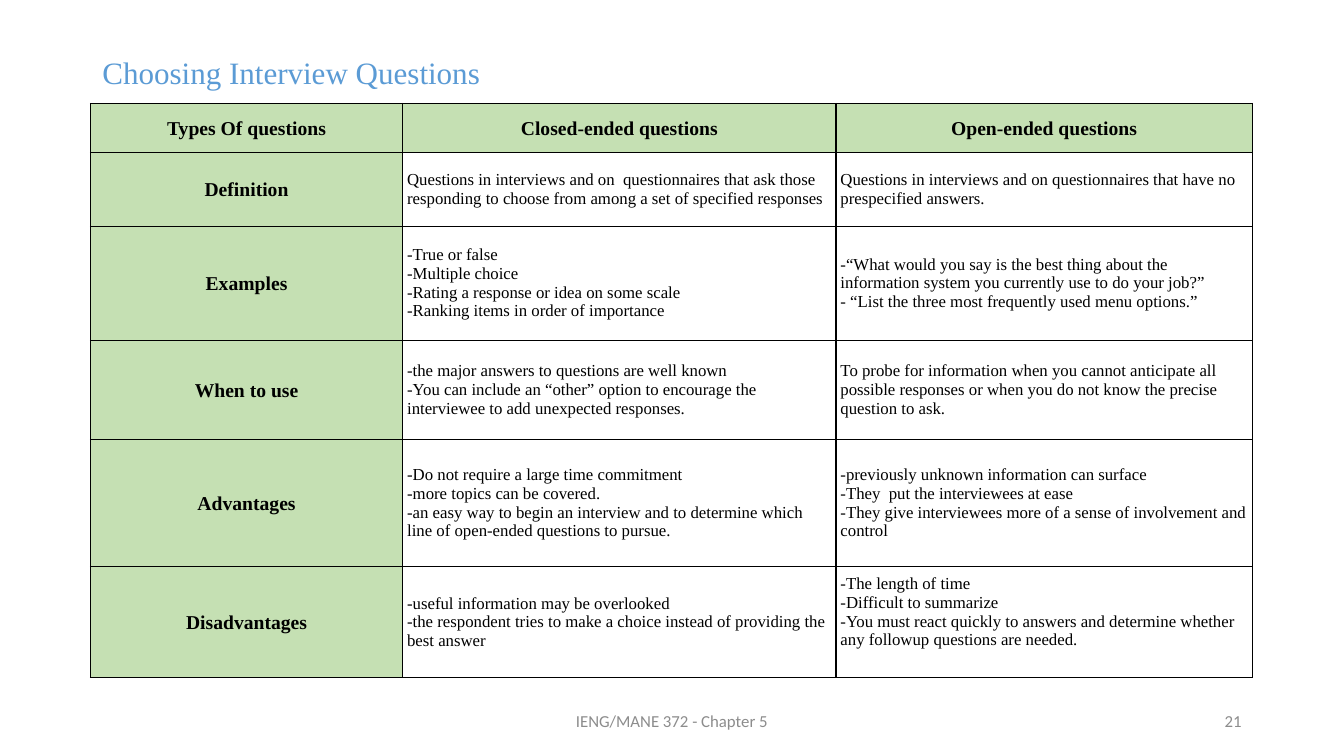
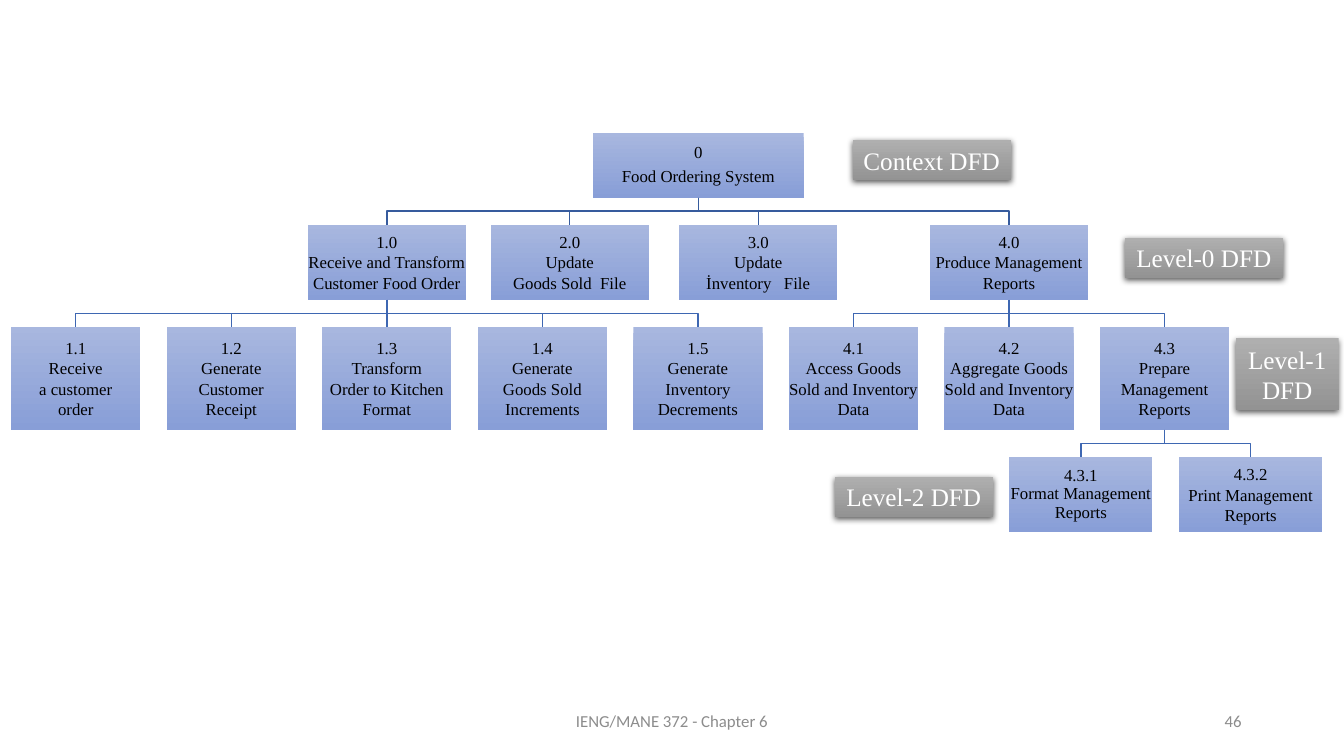
"""Build a table slide on interview questions and a tree slide on data flow levels."""
from dataclasses import dataclass

from lxml.etree import SubElement as Sub
from pptx import Presentation as Deck
from pptx.dml.color import RGBColor as RGB
from pptx.enum.shapes import MSO_CONNECTOR as Link, MSO_SHAPE as Kind
from pptx.enum.text import MSO_ANCHOR as Anchor, PP_ALIGN as Align
from pptx.oxml.ns import qn
from pptx.util import Cm, Pt


@dataclass(frozen=True)
class Theme:
    """Colours, fonts and type sizes."""
    ink: str = "000000"
    white: str = "FFFFFF"
    blue: str = "5B9BD5"
    gray: str = "8C8C8C"
    green: str = "C5E0B3"
    node: tuple = ("A8B7DF", "889ED7")
    tag: tuple = ("AFAFAF", "939393")
    upper: str = "365B9D"
    lower: str = "3E67B2"
    serif: str = "Times New Roman"
    sans: str = "Calibri"
    title: float = 22.2
    label: int = 18
    head: int = 14
    body: int = 12


T = Theme()


def write(frame, text, size=T.body, color=T.ink, font=T.serif, bold=False,
          align=Align.LEFT, lead=None, after=0):
    """Fill a text frame, one paragraph a line."""
    frame.word_wrap = True
    for i, line in enumerate(text.split("\n")):
        para = frame.paragraphs[0] if i == 0 else frame.add_paragraph()
        para.alignment = align
        para.space_after = Pt(after)
        if lead:
            para.line_spacing = lead
        run = para.add_run()
        run.text = line
        run.font.size = Pt(size)
        run.font.name = font
        run.font.bold = bold
        run.font.color.rgb = RGB.from_string(color)


def block(slide, x, y, w, h, shades, text, **style):
    """Add a shaded rectangle with centred text, placed by its top middle."""
    box = slide.shapes.add_shape(Kind.RECTANGLE, Cm(x - w / 2), Cm(y), Cm(w), Cm(h))
    box.shadow.inherit = False
    box.line.fill.background()
    box.fill.gradient()
    box.fill.gradient_angle = 270
    for stop, shade in zip(box.fill.gradient_stops, shades):
        stop.color.rgb = RGB.from_string(shade)
    frame = box.text_frame
    frame.margin_left = frame.margin_right = frame.margin_top = frame.margin_bottom = 0
    frame.vertical_anchor = Anchor.MIDDLE
    write(frame, text, align=Align.CENTER, **style)
    return box


deck = Deck()
deck.slide_width, deck.slide_height = Cm(33.87), Cm(19.05)

slides = []
for chapter, page in (("IENG/MANE 372 - Chapter 5", "21"), ("IENG/MANE 372 - Chapter 6", "46")):
    slide = deck.slides.add_slide(deck.slide_layouts[6])
    slides.append(slide)
    for text, x, w, align in ((chapter, 11.22, 11.43, Align.CENTER), (page, 23.92, 7.62, Align.RIGHT)):
        foot = slide.shapes.add_textbox(Cm(x), Cm(17.66), Cm(w), Cm(1.01)).text_frame
        foot.vertical_anchor = Anchor.MIDDLE
        write(foot, text, color=T.gray, font=T.sans, align=align)
first, second = slides

title = first.shapes.add_textbox(Cm(2.33), Cm(1.4), Cm(29.21), Cm(1.02)).text_frame
write(title, "Choosing Interview Questions", size=T.title, color=T.blue, lead=0.8)

rows = [
    (1.24, "Types Of questions", "Closed-ended questions", "Open-ended questions"),
    (1.85, "Definition",
     "Questions in interviews and on  questionnaires that ask those responding to choose from among a set of specified responses",
     "Questions in interviews and on questionnaires that have no prespecified answers."),
    (2.87, "Examples",
     "-True or false\n-Multiple choice\n-Rating a response or idea on some scale\n-Ranking items in order of importance",
     "-“What would you say is the best thing about the information system you currently use to do your job?”\n"
     "- “List the three most frequently used menu options.”"),
    (2.51, "When to use",
     "-the major answers to questions are well known\n"
     "-You can include an “other” option to encourage the interviewee to add unexpected responses.",
     "To probe for information when you cannot anticipate all possible responses or when you do not know the precise question to ask."),
    (3.2, "Advantages",
     "-Do not require a large time commitment\n-more topics can be covered.\n"
     "-an easy way to begin an interview and to determine which line of open-ended questions to pursue.",
     "-previously unknown information can surface\n-They  put the interviewees at ease\n"
     "-They give interviewees more of a sense of involvement and control"),
    (2.79, "Disadvantages",
     "-useful information may be overlooked\n"
     "-the respondent tries to make a choice instead of providing the best answer",
     "-The length of time\n-Difficult to summarize\n"
     "-You must react quickly to answers and determine whether any followup questions are needed."),
]
widths = (7.87, 10.92, 10.49)
high = sum(row[0] for row in rows)
grid = first.shapes.add_table(len(rows), len(widths), Cm(2.28), Cm(2.61), Cm(sum(widths)), Cm(high)).table
grid.first_row = grid.horz_banding = False
for col, w in zip(grid.columns, widths):
    col.width = Cm(w)
for r, (h, *texts) in enumerate(rows):
    grid.rows[r].height = Cm(h)
    for c, text in enumerate(texts):
        cell = grid.cell(r, c)
        cell.vertical_anchor = Anchor.MIDDLE
        cell.margin_left = cell.margin_right = Cm(0.11)
        cell.margin_top = cell.margin_bottom = 0
        for side in ("a:lnL", "a:lnR", "a:lnT", "a:lnB"):
            edge = Sub(cell._tc.get_or_add_tcPr(), qn(side), w=str(Pt(1)))
            Sub(Sub(edge, qn("a:solidFill")), qn("a:srgbClr"), val=T.ink)
        if r == 0 or c == 0:
            cell.fill.solid()
            cell.fill.fore_color.rgb = RGB.from_string(T.green)
            write(cell.text_frame, text, size=T.head, bold=True, align=Align.CENTER, lead=1.07, after=8)
        else:
            cell.fill.background()
            write(cell.text_frame, text)
grid.cell(5, 2).margin_bottom = Cm(0.49)

gap = 0.68
mids = [round(1.91 + 3.92 * i, 2) for i in range(8)]
tight = {"lead": 0.9, "after": 4.2}
tiers = [
    (5.31, 1.63, [("0", None, 17.6, "Food Ordering System", tight)]),
    (3.99, 1.9, [
        ("1.0", "0", mids[2], "Receive and Transform Customer Food Order", {}),
        ("2.0", "0", 14.36, "Update\nGoods Sold  File", {}),
        ("3.0", "0", 19.11, "Update\nİnventory   File", {}),
        ("4.0", "0", mids[6], "Produce Management\nReports", {})]),
    (3.26, 2.59, [
        ("1.1", "1.0", mids[0], "Receive\na customer\norder", {}),
        ("1.2", "1.0", mids[1], "Generate Customer\nReceipt", {}),
        ("1.3", "1.0", mids[2], "Transform\nOrder to Kitchen Format", {}),
        ("1.4", "1.0", mids[3], "Generate\nGoods Sold Increments", {}),
        ("1.5", "1.0", mids[4], "Generate Inventory Decrements", {}),
        ("4.1", "4.0", mids[5], "Access Goods Sold and Inventory Data", {}),
        ("4.2", "4.0", mids[6], "Aggregate Goods Sold and Inventory Data", {}),
        ("4.3", "4.0", mids[7], "Prepare Management Reports", {})]),
    (3.61, 1.9, [
        ("4.3.1", "4.3", 27.24, "Format Management Reports", {"lead": 0.9}),
        ("4.3.2", "4.3", 31.52, "Print Management Reports", {})]),
]
nodes = {}
top = 3.35
for w, h, items in tiers:
    for code, root, x, text, style in items:
        box = block(second, x, top, w, h, T.node, code + "\n" + text, **style)
        nodes[code] = (box, x)
        if not root:
            continue
        above, start = nodes[root]
        if start == x:
            line = second.shapes.add_connector(Link.STRAIGHT, Cm(x), Cm(top - gap), Cm(x), Cm(top))
            line.begin_connect(above, 2)
            line.end_connect(box, 0)
            Sub(line._element.spPr, qn("a:effectLst"))
        else:
            bend = top - gap / 2
            pen = second.shapes.build_freeform(Cm(start), Cm(top - gap))
            pen.add_line_segments([(Cm(start), Cm(bend)), (Cm(x), Cm(bend)), (Cm(x), Cm(top))], close=False)
            line = pen.convert_to_shape()
            line.fill.background()
            line.shadow.inherit = False
        line.line.width = Pt(1)
        line.line.color.rgb = RGB.from_string(T.upper if root == "0" else T.lower)
    top += h + gap

for text, x, y, w, h in (("Context DFD", 23.48, 3.53, 3.99, 1.02),
                         ("Level-0 DFD", 30.34, 5.99, 3.99, 1.02),
                         ("Level-1 DFD", 32.44, 8.53, 2.59, 1.8),
                         ("Level-2 DFD", 23.03, 12.01, 3.99, 1.02)):
    tag = block(second, x, y, w, h, T.tag, text, size=T.label, color=T.white)
    shade = Sub(tag._element.spPr.find(qn("a:effectLst")), qn("a:outerShdw"), blurRad=str(Pt(4.5)),
                dist=str(Pt(1.5)), dir="5400000", algn="ctr", rotWithShape="0")
    Sub(Sub(shade, qn("a:srgbClr"), val=T.ink), qn("a:alpha"), val="63000")

deck.save("out.pptx")
